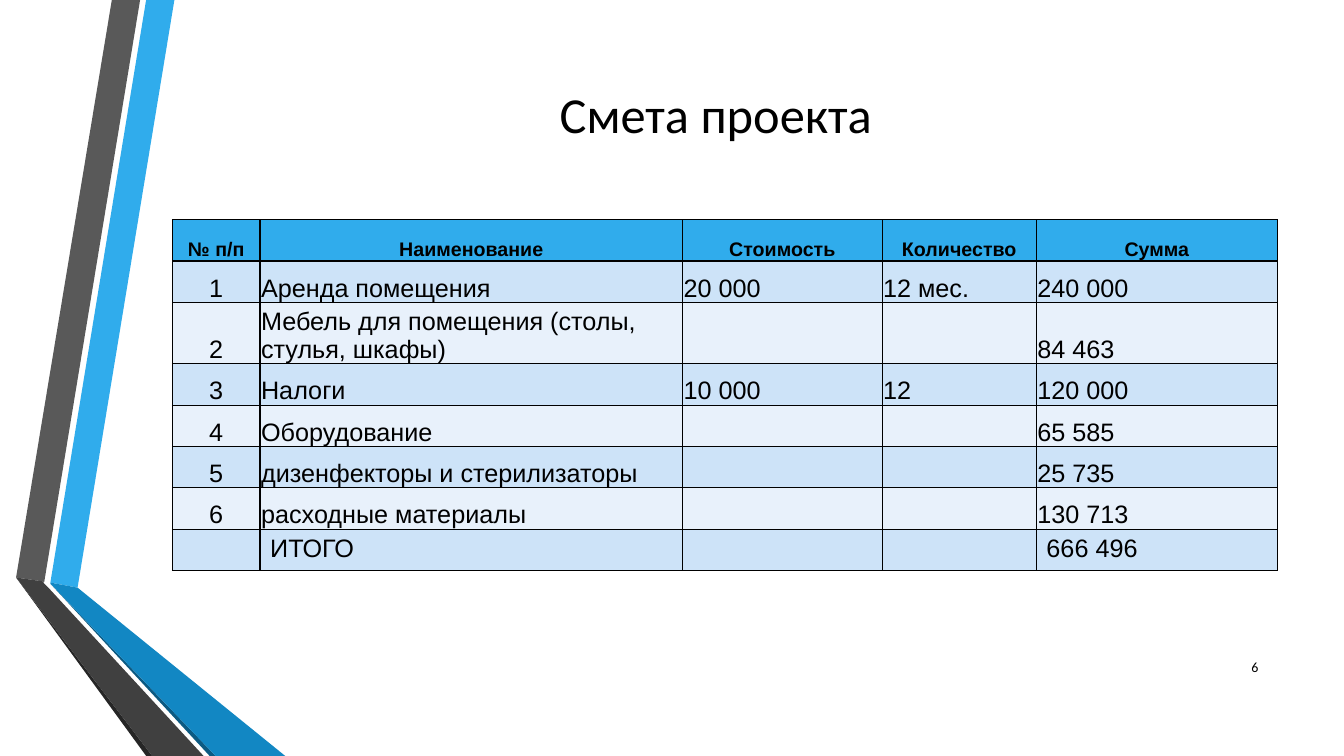
from typing import NamedTuple

from lxml.etree import SubElement
from pptx import Presentation
from pptx.dml.color import RGBColor as RGB
from pptx.enum.text import MSO_ANCHOR as Anchor, PP_ALIGN as Align
from pptx.oxml.ns import qn
from pptx.util import Pt

PX = 9144  # EMU in one px, 100 px to the inch

BLACK = RGB(0x00, 0x00, 0x00)
SKY = RGB(0x30, 0xAC, 0xEC)
BLUE = RGB(0x12, 0x87, 0xC3)
NAVY = RGB(0x0C, 0x5A, 0x82)
GREY = RGB(0x59, 0x59, 0x59)
DARK = RGB(0x40, 0x40, 0x40)
COAL = RGB(0x26, 0x26, 0x26)
BANDS = (RGB(0xE8, 0xF1, 0xFB), RGB(0xCD, 0xE3, 0xF8))


class Strip(NamedTuple):
    color: RGB
    dots: list[tuple[int, int]]


class Label(NamedTuple):
    text: str
    box: tuple[int, int, int, int]
    size: int
    align: Align


STRIPS = [
    Strip(SKY, [(50, 578), (77, 583), (173, 0), (145, 0)]),
    Strip(GREY, [(139, 0), (111, 0), (16, 573), (44, 577)]),
    Strip(COAL, [(16, 573), (145, 750), (151, 750)]),
    Strip(NAVY, [(50, 579), (208, 750), (214, 750)]),
    Strip(BLUE, [(50, 579), (214, 750), (283, 750), (77, 583), (50, 578)]),
    Strip(DARK, [(202, 750), (48, 583), (43, 578), (44, 577), (16, 573), (151, 750)]),
]

LABELS = [
    Label("Смета проекта", (162, 75, 1096, 74), 36, Align.CENTER),
    Label("6", (1198, 642, 60, 40), 10, Align.RIGHT),
]

COLS = [87, 419, 198, 153, 239]
ROW = 41
ROWS = [
    ["№ п/п", "Наименование", "Стоимость", "Количество", "Сумма"],
    ["1", "Аренда помещения", "20 000", "12 мес.", "240 000"],
    ["2", "Мебель для помещения (столы, стулья, шкафы)", "", "", "84 463"],
    ["3", "Налоги", "10 000", "12", "120 000"],
    ["4", "Оборудование", "", "", "65 585"],
    ["5", "дизенфекторы и стерилизаторы", "", "", "25 735"],
    ["6", "расходные материалы", "", "", "130 713"],
    ["", "ИТОГО", "", "", "666 496"],
]


def write(frame, text: str, *, size: int, font: str, bold: bool = False,
          align: Align = Align.LEFT) -> None:
    para = frame.paragraphs[0]
    para.alignment = align
    run = para.add_run()
    run.text = text
    run.font.size = Pt(size)
    run.font.name = font
    run.font.bold = bold
    run.font.color.rgb = BLACK


def draw_strip(shapes, strip: Strip) -> None:
    first, *rest = strip.dots
    path = shapes.build_freeform(*first, scale=PX)
    path.add_line_segments(rest, close=True)
    shape = path.convert_to_shape()
    shape.shadow.inherit = False
    shape.fill.solid()
    shape.fill.fore_color.rgb = strip.color
    shape.line.fill.background()


def draw_label(shapes, label: Label) -> None:
    frame = shapes.add_textbox(*(n * PX for n in label.box)).text_frame
    frame.word_wrap = True
    frame.vertical_anchor = Anchor.MIDDLE
    write(frame, label.text, size=label.size, font="Calibri", align=label.align)


def rule_cell(cell) -> None:
    """Put a thin black line on all four sides."""
    props = cell._tc.get_or_add_tcPr()
    for side in ("lnL", "lnR", "lnT", "lnB"):
        line = SubElement(props, qn(f"a:{side}"), w=str(Pt(1)))
        fill = SubElement(line, qn("a:solidFill"))
        SubElement(fill, qn("a:srgbClr"), val=str(BLACK))


def draw_cell(cell, text: str, row: int, col: int) -> None:
    head, total = row == 0, row == len(ROWS) - 1
    rule_cell(cell)
    cell.fill.solid()
    cell.fill.fore_color.rgb = SKY if head else BANDS[row % 2]
    if not text:
        return
    if not total:
        cell.vertical_anchor = Anchor.BOTTOM
        cell.margin_left = cell.margin_top = cell.margin_right = PX
        cell.margin_bottom = 0
    write(cell.text_frame, text, size=14 if head else 18, font="Arial", bold=head,
          align=Align.CENTER if head or col == 0 else Align.LEFT)


def draw_table(shapes) -> None:
    size = sum(COLS) * PX, len(ROWS) * ROW * PX
    table = shapes.add_table(len(ROWS), len(COLS), 171 * PX, 218 * PX, *size).table
    table.first_row = table.horz_banding = False
    for col, width in zip(table.columns, COLS):
        col.width = width * PX
    for r, texts in enumerate(ROWS):
        table.rows[r].height = ROW * PX
        for c, text in enumerate(texts):
            draw_cell(table.cell(r, c), text, r, c)


def main() -> None:
    deck = Presentation()
    deck.slide_width, deck.slide_height = 1333 * PX, 750 * PX
    shapes = deck.slides.add_slide(deck.slide_layouts[6]).shapes

    # Folded ribbons on the left
    for strip in STRIPS:
        draw_strip(shapes, strip)

    # Title and page number
    for label in LABELS:
        draw_label(shapes, label)

    # Budget
    draw_table(shapes)
    deck.save("out.pptx")


if __name__ == "__main__":
    main()
